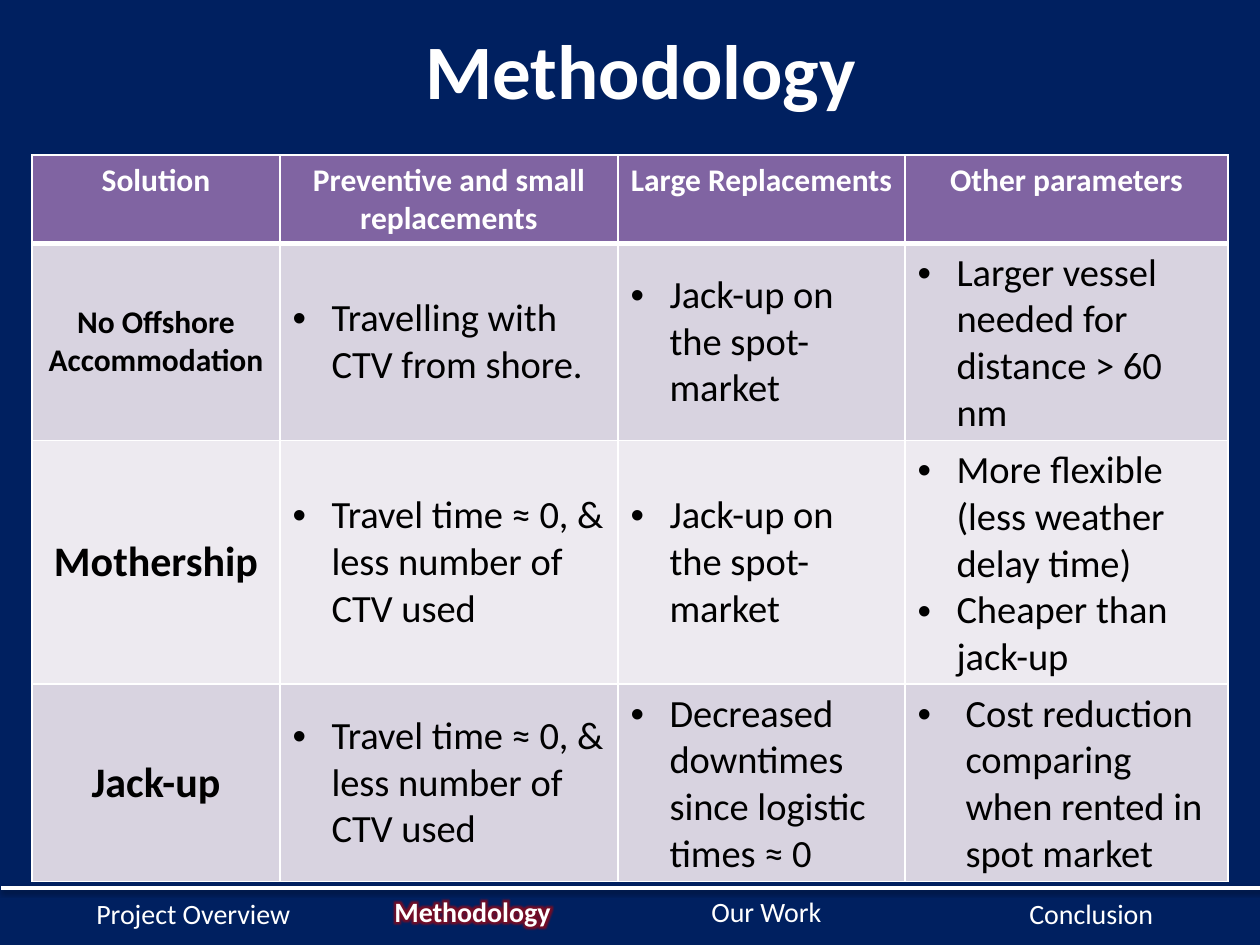
"""Build the Methodology slide: a comparison table above a navigation footer."""
from lxml.etree import SubElement
from pptx import Presentation
from pptx.dml.color import RGBColor
from pptx.enum.shapes import MSO_CONNECTOR
from pptx.enum.text import MSO_ANCHOR, PP_ALIGN
from pptx.oxml import parse_xml
from pptx.oxml.ns import qn
from pptx.util import Emu, Pt

SCALE = 914400 / 126
NS = 'xmlns:a="http://schemas.openxmlformats.org/drawingml/2006/main"'
rgb = RGBColor.from_string


def px(*values):
    return [Emu(round(v * SCALE)) for v in values]


def write(p, text, size, color, bold=False):
    r = p.add_run()
    r.text = text
    r.font.color.rgb = rgb(color)
    for name, value in {"name": "Calibri", "size": Pt(size), "bold": bold}.items():
        setattr(r.font, name, value)
    return r


prs = Presentation()
prs.slide_width, prs.slide_height = px(1260, 945)
s = prs.slides.add_slide(prs.slide_layouts[5])
s.background.fill.solid()
s.background.fill.fore_color.rgb = rgb("002060")

title = s.shapes.title
title.left, title.top, title.width, title.height = px(74, 5, 1134, 127)
title.text_frame.vertical_anchor = MSO_ANCHOR.MIDDLE
p = title.text_frame.paragraphs[0]
p.alignment = PP_ALIGN.CENTER
write(p, "Methodology", 44, "FFFFFF", True)

footer = [("Project Overview", 84, 890), ("Methodology", 382, 888),
          ("Our Work", 699, 888), ("Conclusion", 1017, 890)]
for text, left, top in footer:
    tf = s.shapes.add_textbox(*px(left, top, 277, 47)).text_frame
    tf.word_wrap = True
    current = text == "Methodology"
    r = write(tf.paragraphs[0], text, 16, "FFFFFF", current)
    if current:
        r.font._element.find(qn("a:solidFill")).addnext(parse_xml(
            f'<a:effectLst {NS}><a:glow rad="101600"><a:srgbClr val="C00000">'
            '<a:alpha val="60000"/></a:srgbClr></a:glow></a:effectLst>'))

line = s.shapes.add_connector(MSO_CONNECTOR.STRAIGHT, *px(1, 888, 1261, 888))
line.line.color.rgb = rgb("FFFFFF")
line.line.width = Pt(2)
line._element.spPr.append(parse_xml(
    f'<a:effectLst {NS}><a:outerShdw blurRad="40000" dist="20000" dir="5400000">'
    '<a:srgbClr val="000000"><a:alpha val="38000"/></a:srgbClr>'
    '</a:outerShdw></a:effectLst>'))

rows = [
    ["Solution", "Preventive and small replacements", "Large Replacements",
     "Other parameters"],
    ["No Offshore Accommodation", "Travelling with CTV from shore.",
     "Jack-up on the spot-market", "Larger vessel needed for distance > 60 nm"],
    ["Mothership", "Travel time ≈ 0, & less number of CTV used",
     "Jack-up on the spot-market",
     "More flexible (less weather delay time)\nCheaper than jack-up"],
    ["Jack-up", "Travel time ≈ 0, & less number of CTV used",
     "Decreased downtimes since logistic times ≈ 0",
     "Cost reduction comparing when rented in spot market"],
]
fills = ["8064A2", "D8D3E0", "EDEAF0", "D8D3E0"]
label_sizes = [18, 18, 24, 24]
table = s.shapes.add_table(4, 4, *px(32, 155, 1196, 727)).table
for column, width in zip(table.columns, px(248, 338, 287, 323)):
    column.width = width
for row, height in zip(table.rows, px(81, 171, 210, 176)):
    row.height = height

for i, texts in enumerate(rows):
    for j, text in enumerate(texts):
        cell = table.cell(i, j)
        cell.vertical_anchor = MSO_ANCHOR.MIDDLE if i else MSO_ANCHOR.TOP
        label = i == 0 or j == 0
        for n, item in enumerate(text.split("\n")):
            tf = cell.text_frame
            p = tf.add_paragraph() if n else tf.paragraphs[0]
            if label:
                p.alignment = PP_ALIGN.CENTER
            else:
                pPr = p._p.get_or_add_pPr()
                indent = px(48 if (i, j) == (3, 3) else 39)[0]
                pPr.set("marL", str(indent))
                pPr.set("indent", str(-indent))
                SubElement(pPr, qn("a:buFont"), typeface="Arial")
                SubElement(pPr, qn("a:buChar"), char="•")
            write(p, item, label_sizes[i] if label else 22,
                  "000000" if i else "FFFFFF", label)
        tcPr = cell._tc.get_or_add_tcPr()
        for side in "LRTB":
            thick = (i, side) in [(0, "B"), (1, "T")]
            ln = SubElement(tcPr, qn(f"a:ln{side}"), w=str(Pt(3 if thick else 1)))
            SubElement(SubElement(ln, qn("a:solidFill")), qn("a:srgbClr"), val="FFFFFF")
        cell.fill.solid()
        cell.fill.fore_color.rgb = rgb(fills[i])

prs.save("out.pptx")
